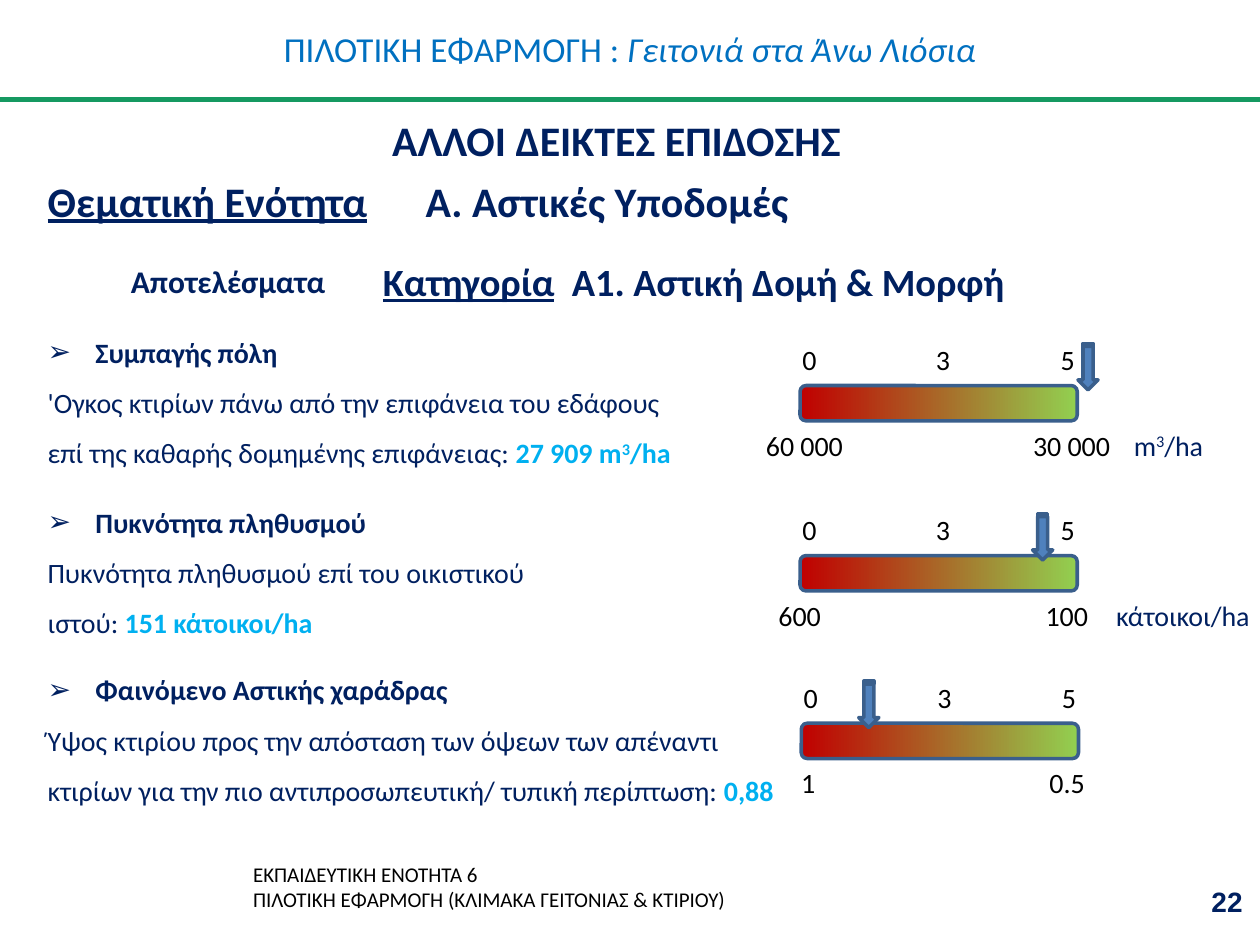
from dataclasses import dataclass

from lxml.etree import SubElement
from pptx import Presentation
from pptx.dml.color import RGBColor
from pptx.enum.shapes import MSO_CONNECTOR, MSO_SHAPE as Shape
from pptx.enum.text import MSO_ANCHOR as Anchor, MSO_AUTO_SIZE as AutoSize, PP_ALIGN as Align
from pptx.oxml.ns import qn
from pptx.util import Inches, Pt

NAVY, BLACK, SKY = "002060", "000000", "00B0F0"
OUTLINE = "3A5F8C"


@dataclass
class Span:
    text: str
    bold: bool = False
    italic: bool = False
    underline: bool = False
    color: str | None = None
    superscript: bool = False


@dataclass
class Label:
    left: float
    width: float
    spans: list[Span]
    color: str = BLACK


@dataclass
class Indicator:
    top: float
    scale_left: float
    arrow_left: float
    heading: str
    lines: list[list[Span]]
    labels: list[Label]


def rgb(color: str) -> RGBColor:
    return RGBColor.from_string(color)


def write(para, spans: list[Span], size=16, color=NAVY, font="Calibri", align=None, spacing=None):
    """Fill one paragraph; a newline in a span becomes a line break."""
    if align is not None:
        para.alignment = align
    if spacing is not None:
        para.line_spacing = spacing
    for item in spans:
        for index, line in enumerate(item.text.split("\n")):
            if index:
                para.add_line_break()
            span = para.add_run()
            span.text = line
            span.font.name, span.font.size = font, Pt(size)
            span.font.bold, span.font.italic = item.bold, item.italic
            span.font.underline = item.underline
            span.font.color.rgb = rgb(item.color or color)
            if item.superscript:
                span._r.get_or_add_rPr().set("baseline", "30000")


def add_text(shapes, left, top, width, height, spans, wrap=True, anchor=Anchor.TOP, **style):
    box = shapes.add_textbox(Inches(left), Inches(top), Inches(width), Inches(height))
    frame = box.text_frame
    frame.word_wrap = wrap
    frame.vertical_anchor = anchor
    frame.auto_size = AutoSize.SHAPE_TO_FIT_TEXT
    write(frame.paragraphs[0], spans, **style)
    return frame


def add_bullet(para, char: str) -> None:
    props = para._p.get_or_add_pPr()
    props.set("marL", str(Inches(0.38)))
    props.set("indent", str(Inches(-0.38)))
    SubElement(props, qn("a:buFont")).set("typeface", "Arial")
    SubElement(props, qn("a:buChar")).set("char", char)


def add_outlined(shapes, kind, left, top, width, height):
    shape = shapes.add_shape(kind, Inches(left), Inches(top), Inches(width), Inches(height))
    shape.shadow.inherit = False
    shape.line.color.rgb = rgb(OUTLINE)
    shape.line.width = Pt(2)
    return shape


def add_indicator(page, item: Indicator) -> None:
    shapes = page.shapes.add_group_shape().shapes

    # Heading and description
    frame = add_text(shapes, 0.28, item.top, 9.7, 1.18, [Span(item.heading, bold=True)])
    add_bullet(frame.paragraphs[0], "➢")
    for line in item.lines:
        write(frame.add_paragraph(), line, spacing=1.5)

    # Colour scale with its ticks and limits
    bar = add_outlined(shapes, Shape.ROUNDED_RECTANGLE, item.scale_left, item.top + 0.45, 2.2, 0.28)
    bar.fill.gradient()
    bar.fill.gradient_angle = 0
    for stop, color in zip(bar.fill.gradient_stops, ("C00000", "92D050")):
        stop.color.rgb = rgb(color)
    for tick, offset in (("0", -0.08), ("3", 0.98), ("5", 1.97)):
        add_text(shapes, item.scale_left + offset, item.top + 0.06, 0.32, 0.37,
                 [Span(tick)], wrap=False, color=BLACK)
    for label in item.labels:
        add_text(shapes, label.left, item.top + 0.74, label.width, 0.37,
                 label.spans, wrap=False, color=label.color)

    # Marker of the measured value
    arrow = add_outlined(shapes, Shape.STRIPED_RIGHT_ARROW, item.arrow_left, item.top + 0.22, 0.37, 0.16)
    arrow.rotation = 90
    arrow.fill.solid()
    arrow.fill.fore_color.rgb = rgb("4F81BD")


def value(text: str, superscript=False) -> Span:
    return Span(text, bold=True, color=SKY, superscript=superscript)


INDICATORS = [
    Indicator(
        2.61, 6.35, 8.45, "Συμπαγής πόλη",
        [[Span("'Ογκος κτιρίων πάνω από την επιφάνεια του εδάφους")],
         [Span("επί της καθαρής δομημένης επιφάνειας: "),
          value("27 909 m"), value("3", superscript=True), value("/ha")]],
        [Label(5.98, 0.82, [Span("60 000")]), Label(8.1, 0.82, [Span("30 000")]),
         Label(8.9, 0.77, [Span("m"), Span("3", superscript=True), Span("/ha")], NAVY)]),
    Indicator(
        3.96, 6.35, 8.09, "Πυκνότητα πληθυσµού",
        [[Span("Πυκνότητα πληθυσμού επί του οικιστικού")],
         [Span("ιστού: "), value("151 κάτοικοι/ha")]],
        [Label(6.08, 0.54, [Span("600")]), Label(8.2, 0.54, [Span("100")]),
         Label(8.76, 1.28, [Span("κάτοικοι/ha")], NAVY)]),
    Indicator(
        5.29, 6.36, 6.71, "Φαινόμενο Αστικής χαράδρας",
        [[Span("Ύψος κτιρίου προς την απόσταση των όψεων των απέναντι")],
         [Span("κτιρίων για την πιο αντιπροσωπευτική/ τυπική περίπτωση: "), value("0,88")]],
        [Label(6.26, 0.32, [Span("1")]), Label(8.23, 0.49, [Span("0.5")])]),
]


def main() -> None:
    deck = Presentation()
    deck.slide_width, deck.slide_height = Inches(10), Inches(7.5)
    page = deck.slides.add_slide(deck.slide_layouts[5])

    # Title and rule
    title = page.shapes.title
    title.left, title.top, title.width, title.height = 0, 0, Inches(10), Inches(0.77)
    title.text_frame.auto_size = AutoSize.NONE
    title.text_frame.vertical_anchor = Anchor.MIDDLE
    write(title.text_frame.paragraphs[0],
          [Span("ΠΙΛΟΤΙΚΗ ΕΦΑΡΜΟΓΗ : "), Span("Γειτονιά στα Άνω Λιόσια", italic=True)],
          size=20, color="0070C0", align=Align.CENTER)
    rule = page.shapes.add_connector(MSO_CONNECTOR.STRAIGHT, 0, Inches(0.79), Inches(10), Inches(0.79))
    rule.line.color.rgb = rgb("159961")
    rule.line.width = Pt(3)
    SubElement(rule._element.spPr, qn("a:effectLst"))

    # Section headings
    add_text(page.shapes, -0.06, 0.86, 9.98, 0.5,
             [Span("ΑΛΛΟΙ ΔΕΙΚΤΕΣ ΕΠΙΔΟΣΗΣ ", bold=True)], size=24, align=Align.CENTER)
    add_text(page.shapes, 0.28, 1.34, 9.71, 0.5,
             [Span("Θεματική Ενότητα", bold=True, underline=True),
              Span(" \tΑ. Αστικές Υποδομές", bold=True)], size=24)
    add_text(page.shapes, 0.94, 2.03, 1.81, 0.4, [Span("Αποτελέσματα", bold=True)], size=18)
    add_text(page.shapes, 2.94, 2, 7.04, 0.47,
             [Span("Κατηγορία", bold=True, underline=True),
              Span(" \tΑ1. Αστική Δομή & Μορφή", bold=True)], size=22)

    for item in INDICATORS:
        add_indicator(page, item)

    # Footer and page number
    add_text(page.shapes, 1.91, 6.79, 6.79, 0.5,
             [Span("ΕΚΠΑΙΔΕΥΤΙΚΗ ΕΝΟΤΗΤΑ 6\nΠΙΛΟΤΙΚΗ ΕΦΑΡΜΟΓΗ (ΚΛΙΜΑΚΑ ΓΕΙΤΟΝΙΑΣ & ΚΤΙΡΙΟΥ)")],
             size=12, color=BLACK)
    add_text(page.shapes, 7.63, 6.95, 2.33, 0.4, [Span("22", bold=True)], anchor=Anchor.MIDDLE,
             size=16, font="Arial", align=Align.RIGHT)

    deck.save("out.pptx")


if __name__ == "__main__":
    main()
